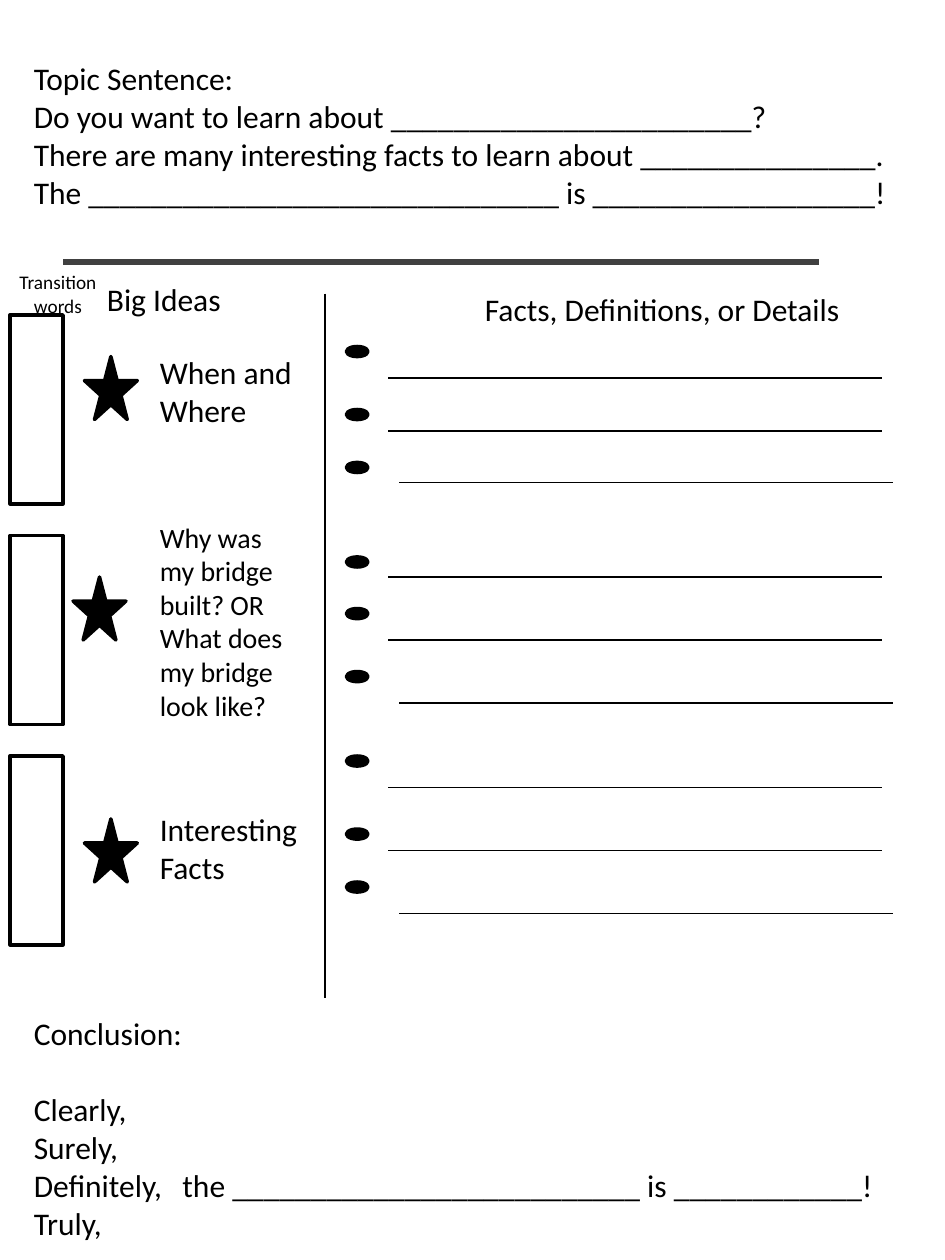
from lxml.etree import SubElement
from pptx import Presentation
from pptx.dml.color import RGBColor
from pptx.enum.shapes import MSO_CONNECTOR as Connector, MSO_SHAPE as Shape
from pptx.enum.text import MSO_AUTO_SIZE as AutoSize, PP_ALIGN as Align
from pptx.oxml.ns import qn
from pptx.util import Inches, Pt

BLACK = RGBColor(0, 0, 0)
WHITE = RGBColor(255, 255, 255)
GRAY = RGBColor(0x40, 0x40, 0x40)
FONT = "Calibri"

SECTION_TOP = 2.5
SECTION_STEP = 1.75
SECTION_HEIGHT = 1.5

IDEAS = [
    (["When and Where"], 18, (0.25, 1.25, 1.01), (0.67, 0.33)),
    (["Why was my bridge built? OR", "What does my bridge look like?"], 16,
     (-0.17, 1.25, 1.72), (0.58, 0.33)),
    (["Interesting Facts"], 18, (0.38, 1.42, 0.71), (0.67, 0.5)),
]
FACTS = [
    [(0.25, 0.5), (0.75, 0.92), (1.17, 1.33)],
    [(0.17, 0.33), (0.58, 0.83), (1.08, 1.33)],
    [(0, 0.25), (0.58, 0.75), (1, 1.25)],
]


def add_text(slide, left, top, width, height, lines, size=18, align=Align.LEFT):
    box = slide.shapes.add_textbox(Inches(left), Inches(top), Inches(width), Inches(height))
    frame = box.text_frame
    frame.word_wrap = True
    frame.auto_size = AutoSize.SHAPE_TO_FIT_TEXT
    for index, line in enumerate(lines):
        paragraph = frame.paragraphs[0] if index == 0 else frame.add_paragraph()
        paragraph.alignment = align
        run = paragraph.add_run()
        run.text = line
        run.font.name = FONT
        run.font.size = Pt(size)
        run.font.color.rgb = BLACK
    return frame


def add_figure(slide, kind, left, top, width, height, fill=BLACK):
    shape = slide.shapes.add_shape(kind, Inches(left), Inches(top), Inches(width), Inches(height))
    shape.shadow.inherit = False
    shape.fill.solid()
    shape.fill.fore_color.rgb = fill
    shape.line.color.rgb = BLACK
    shape.line.width = Pt(2)


def add_line(slide, x1, y1, x2, y2, width=0.75, color=BLACK):
    line = slide.shapes.add_connector(
        Connector.STRAIGHT, Inches(x1), Inches(y1), Inches(x2), Inches(y2))
    line.line.color.rgb = color
    line.line.width = Pt(width)
    SubElement(line._element.spPr, qn("a:effectLst"))


def add_topic(slide, left, top, width, height):
    add_text(slide, left, top, width, height, [
        "Topic Sentence:",
        "Do you want to learn about " + "_" * 23 + "?",
        "There are many interesting facts to learn about " + "_" * 15 + ".",
        "The " + "_" * 30 + " is " + "_" * 18 + "!",
    ])


def add_headings(slide, left, top, width):
    add_line(slide, left + 0.5, top, left + width - 1, top, 3, GRAY)
    add_text(slide, left, top + 0.02, 0.92, 0.47, ["Transition words"], 11, Align.CENTER)
    add_text(slide, left + 0.75, top + 0.09, 1.92, 0.4, ["Big Ideas"])
    add_text(slide, left + 3.75, top + 0.17, 3.5, 0.4, ["Facts, Definitions, or Details"])
    add_line(slide, left + 2.58, top + 0.25, left + 2.58, top + 5.84, 1.5)


def add_idea(slide, left, top, height, lines, size, text_box, star):
    text_top, text_width, text_height = text_box
    star_left, star_top = star
    add_figure(slide, Shape.RECTANGLE, left + 0.08, top, 0.42, height, WHITE)
    add_figure(slide, Shape.STAR_5_POINT, left + star_left, top + star_top, 0.42, 0.5)
    add_text(slide, left + 1.17, top + text_top, text_width, text_height, lines, size)


def add_facts(slide, left, top, rows):
    for index, (dot_top, line_top) in enumerate(rows):
        indent = 0.42 if index == len(rows) - 1 else 0.33
        add_figure(slide, Shape.OVAL, left, top + dot_top, 0.17, 0.08)
        add_line(slide, left + indent, top + line_top, left + indent + 3.92, top + line_top)


def add_conclusion(slide, left, top, width, height):
    frame = add_text(slide, left, top, width, height, [
        "Conclusion:",
        "Clearly,",
        "Surely,",
        "Definitely,\tthe " + "_" * 26 + " is " + "_" * 12 + "!",
        "Truly,",
    ])
    frame.paragraphs[0].space_after = Pt(22)
    properties = frame.paragraphs[3]._p.get_or_add_pPr()
    tabs = SubElement(properties, qn("a:tabLst"))
    SubElement(tabs, qn("a:tab"), pos=str(Inches(1.18)), algn="l")


def main():
    presentation = Presentation()
    presentation.slide_width = Inches(7.5)
    presentation.slide_height = Inches(10)
    slide = presentation.slides.add_slide(presentation.slide_layouts[6])
    add_topic(slide, 0.17, 0.42, 7, 1.31)
    add_headings(slide, 0, 2.08, 7.5)
    for index, (idea, rows) in enumerate(zip(IDEAS, FACTS)):
        top = SECTION_TOP + index * SECTION_STEP
        add_idea(slide, 0, top, SECTION_HEIGHT, *idea)
        add_facts(slide, 2.75, top, rows)
    add_conclusion(slide, 0.17, 8, 7, 1.92)
    presentation.save("out.pptx")


if __name__ == "__main__":
    main()
